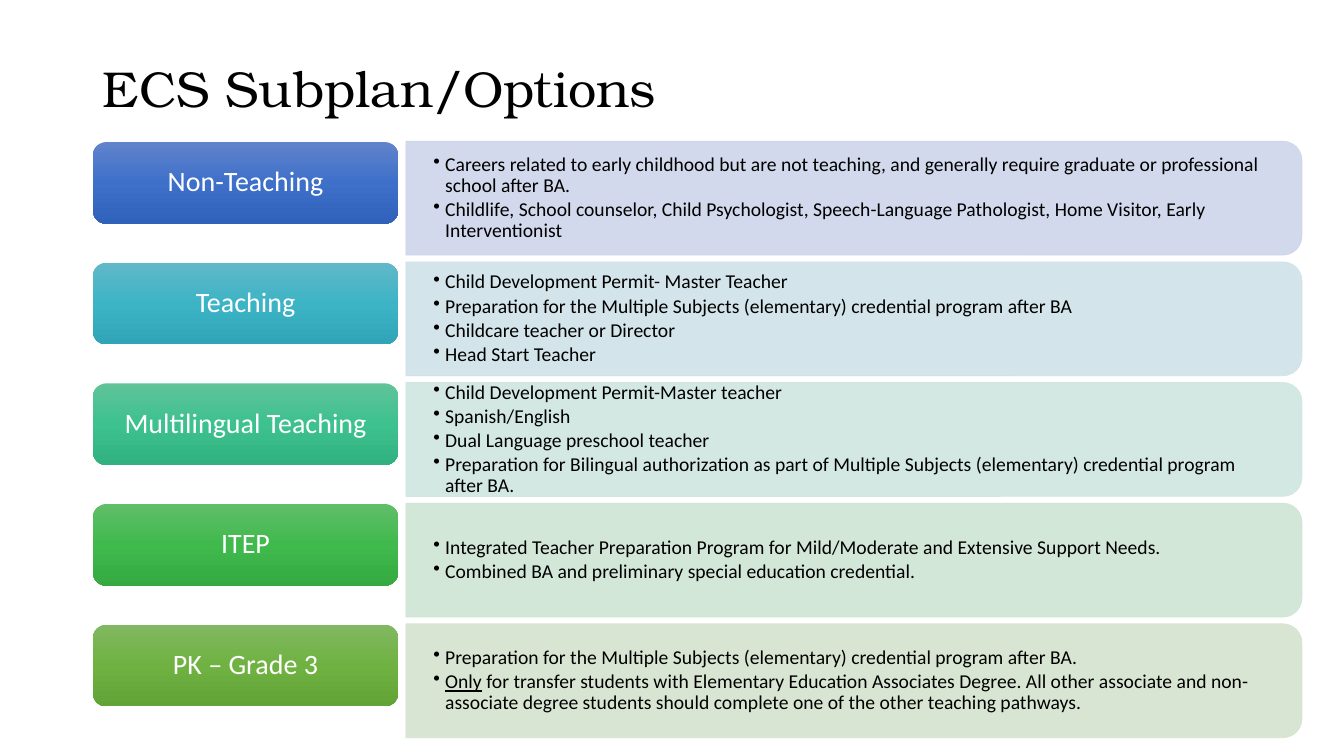
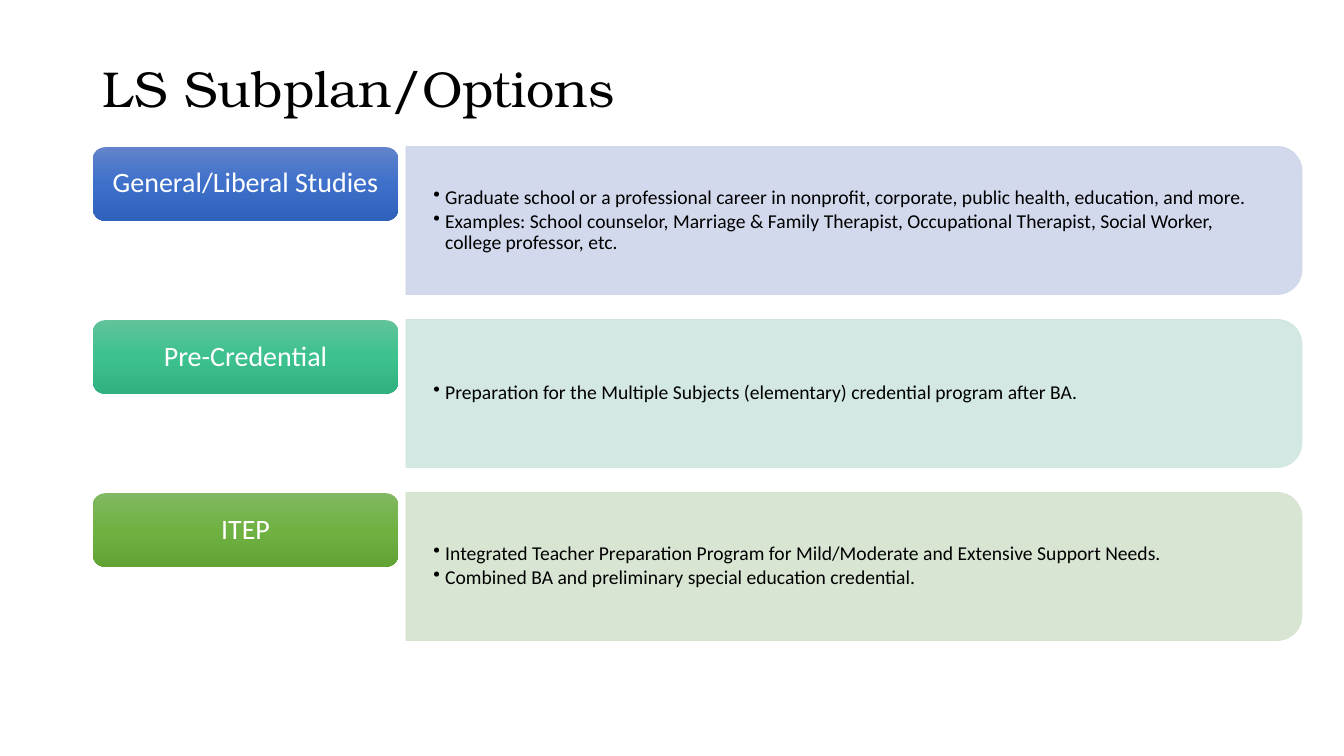
from copy import deepcopy
from dataclasses import dataclass, field

from lxml import etree
from pptx import Presentation
from pptx.dml.color import RGBColor
from pptx.enum.shapes import MSO_SHAPE
from pptx.enum.text import MSO_ANCHOR, MSO_AUTO_SIZE, PP_ALIGN
from pptx.oxml.ns import qn
from pptx.util import Cm, Pt

ROUNDED = MSO_SHAPE.ROUNDED_RECTANGLE
ROUNDED_TOP = MSO_SHAPE.ROUND_2_SAME_RECTANGLE
LEFT, CENTER = PP_ALIGN.LEFT, PP_ALIGN.CENTER
MIDDLE = MSO_ANCHOR.MIDDLE
NO_AUTOFIT = MSO_AUTO_SIZE.NONE


@dataclass
class Theme:
    # Each accent: panel tint, then the three stops of the label gradient
    accents: dict = field(default_factory=lambda: {
        "blue": ("CFD5EA", "6183CB", "3E70CA", "3062BB"),
        "cyan": ("CFE2E8", "61B8C7", "3DB4C6", "30A5B7"),
        "teal": ("CFE6E0", "60C39A", "3DC18F", "31B080"),
        "green": ("CFE5D4", "60BE68", "40B94D", "34AA41"),
        "lime": ("D5E3CF", "81B861", "6FB242", "62A336"),
    })
    title: dict = field(default_factory=lambda: {
        "name": "TeX Gyre Bonum", "size": Pt(36), "color": "000000"})
    label: dict = field(default_factory=lambda: {
        "name": "Calibri", "size": Pt(20), "color": "FFFFFF"})
    detail: dict = field(default_factory=lambda: {
        "name": "Calibri", "size": Pt(14), "color": "000000"})


theme = Theme()

# Horizontal layout shared by both slides
LABEL_LEFT, LABEL_WIDTH = Cm(2.34), Cm(7.7)
PANEL_LEFT, PANEL_WIDTH = Cm(10.23), Cm(22.58)
DETAIL_WIDTH = Cm(22.43)
BULLET_INDENT = Cm(0.3)

ITEP_DETAILS = [
    "Integrated Teacher Preparation Program for Mild/Moderate and Extensive Support Needs.",
    "Combined BA and preliminary special education credential.",
]

# Text between underscores is underlined
SLIDES = [
    {
        "title": "ECS Subplan/Options",
        "top": Cm(3.56), "pitch": Cm(3.04),
        "panel_height": Cm(2.87), "label_height": Cm(2.06),
        "rows": [
            ("blue", "Non-Teaching", [
                "Careers related to early childhood but are not teaching, and generally "
                "require graduate or professional school after BA.",
                "Childlife, School counselor, Child Psychologist, Speech-Language "
                "Pathologist, Home Visitor, Early Interventionist",
            ]),
            ("cyan", "Teaching", [
                "Child Development Permit- Master Teacher",
                "Preparation for the Multiple Subjects (elementary) credential program after BA",
                "Childcare teacher or Director",
                "Head Start Teacher",
            ]),
            ("teal", "Multilingual Teaching", [
                "Child Development Permit-Master teacher",
                "Spanish/English",
                "Dual Language preschool teacher",
                "Preparation for Bilingual authorization as part of Multiple Subjects "
                "(elementary) credential program after BA.",
            ]),
            ("green", "ITEP", ITEP_DETAILS),
            ("lime", "PK – Grade 3", [
                "Preparation for the Multiple Subjects (elementary) credential program after BA.",
                "_Only_ for transfer students with Elementary Education Associates Degree. "
                "All other associate and non-associate degree students should complete one "
                "of the other teaching pathways.",
            ]),
        ],
    },
    {
        "title": "LS Subplan/Options",
        "top": Cm(3.69), "pitch": Cm(4.36),
        "panel_height": Cm(3.73), "label_height": Cm(1.85),
        "rows": [
            ("blue", "General/Liberal Studies", [
                "Graduate school or a professional career in nonprofit, corporate, public "
                "health, education, and more.",
                "Examples: School counselor, Marriage & Family Therapist, Occupational "
                "Therapist, Social Worker, college professor, etc.",
            ]),
            ("teal", "Pre-Credential", [
                "Preparation for the Multiple Subjects (elementary) credential program after BA.",
            ]),
            ("lime", "ITEP", ITEP_DETAILS),
        ],
    },
]


def write_text(text_frame, lines, style, alignment, margins, bulleted=False):
    """Fill a text frame, one paragraph per line."""
    frame_format = {
        "word_wrap": True, "auto_size": NO_AUTOFIT, "vertical_anchor": MIDDLE,
        "margin_left": margins[0], "margin_right": margins[0],
        "margin_top": margins[1], "margin_bottom": margins[1],
    }
    for name, value in frame_format.items():
        setattr(text_frame, name, value)
    for index, line in enumerate(lines):
        paragraph = text_frame.add_paragraph() if index else text_frame.paragraphs[0]
        paragraph.alignment = alignment
        paragraph.line_spacing = 0.9
        if bulleted:
            paragraph.space_after = Pt(2.1)
            properties = paragraph._p.get_or_add_pPr()
            properties.set("marL", str(BULLET_INDENT))
            properties.set("indent", str(-BULLET_INDENT))
            etree.SubElement(properties, qn("a:buChar")).set("char", "•")
        for position, piece in enumerate(line.split("_")):
            if not piece:
                continue
            run = paragraph.add_run()
            run.text = piece
            run.font.name = style["name"]
            run.font.size = style["size"]
            run.font.color.rgb = RGBColor.from_string(style["color"])
            if position % 2:
                run.font.underline = True


presentation = Presentation()
presentation.slide_width = Cm(33.87)
presentation.slide_height = Cm(19.05)
title_only = presentation.slide_layouts[5]

for content in SLIDES:
    slide = presentation.slides.add_slide(title_only)

    # Title
    title = slide.shapes.title
    title_box = {"left": LABEL_LEFT, "top": Cm(1.02), "width": Cm(29.21), "height": Cm(2.57)}
    for name, value in title_box.items():
        setattr(title, name, value)
    write_text(title.text_frame, [content["title"]], theme.title, LEFT, (Cm(0.25), Cm(0.13)))

    for row, (accent, label_text, details) in enumerate(content["rows"]):
        tint, *stops = theme.accents[accent]
        top = content["top"] + row * content["pitch"]
        height = content["panel_height"]

        # Panel: upright shape turned a quarter so its round corners face right
        offset = (PANEL_WIDTH - height) // 2
        panel = slide.shapes.add_shape(
            ROUNDED_TOP, PANEL_LEFT + offset, top - offset, height, PANEL_WIDTH)
        panel.rotation = 90
        panel.shadow.inherit = False
        panel.line.width = Pt(0.5)
        for fill in (panel.fill, panel.line.fill):
            fill.solid()
            fill.fore_color.rgb = RGBColor.from_string(tint)
        for color in panel._element.spPr.iter(qn("a:srgbClr")):
            etree.SubElement(color, qn("a:alpha")).set("val", "90000")

        # Bulleted details over the panel
        detail_box = slide.shapes.add_textbox(PANEL_LEFT, top, DETAIL_WIDTH, height)
        write_text(detail_box.text_frame, details, theme.detail, LEFT,
                   (Cm(0.69), 0), bulleted=True)

        # Label with a three-stop vertical gradient
        label = slide.shapes.add_shape(
            ROUNDED, LABEL_LEFT, top + Cm(0.02), LABEL_WIDTH, content["label_height"])
        label.shadow.inherit = False
        label.line.fill.background()
        label.fill.gradient()
        label.fill.gradient_angle = 270
        stop_list = label._element.spPr.find(".//" + qn("a:gsLst"))
        stop_list.insert(1, deepcopy(stop_list[0]))
        for index, stop in enumerate(label.fill.gradient_stops):
            stop.position = index / 2
            stop.color.rgb = RGBColor.from_string(stops[index])
        write_text(label.text_frame, [label_text], theme.label, CENTER, (Cm(0.3), Cm(0.2)))

presentation.save("out.pptx")
